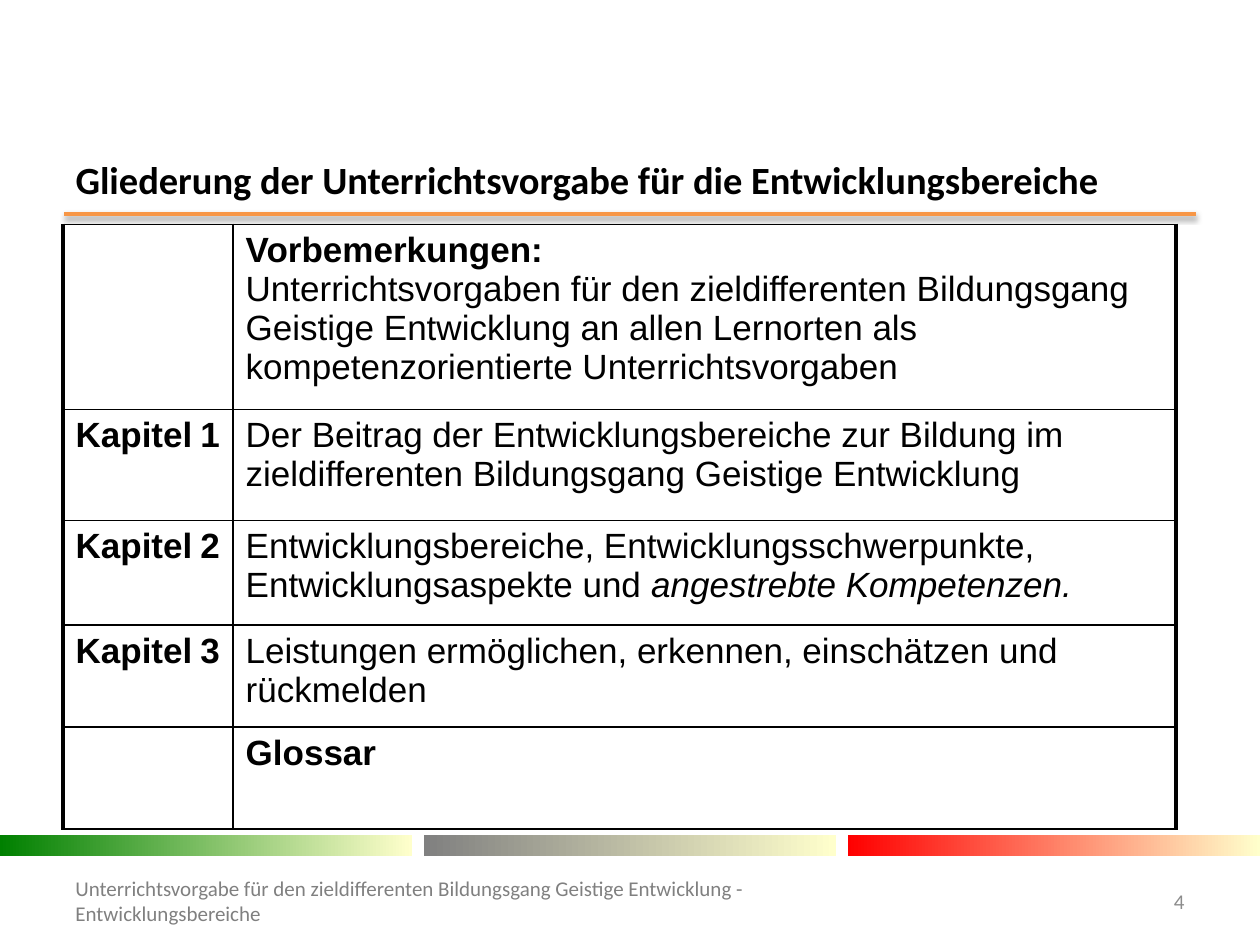
from lxml.etree import SubElement
from pptx import Presentation
from pptx.dml.color import RGBColor
from pptx.enum.shapes import MSO_CONNECTOR, MSO_SHAPE
from pptx.enum.text import MSO_ANCHOR, PP_ALIGN
from pptx.oxml.ns import qn
from pptx.util import Pt

COLORS = {
    "text": "000000", "footer": "808080", "number": "8C8C8C", "rule": "F79646",
    "green": "008000", "gray": "808080", "red": "FF0000", "cream": "FFFFCC",
}
TITLE = "Gliederung der Unterrichtsvorgabe für die Entwicklungsbereiche"
FOOTER = ("Unterrichtsvorgabe für den zieldifferenten Bildungsgang "
          "Geistige Entwicklung - Entwicklungsbereiche")
COLUMN_WIDTHS = (97.2, 538.8)
# Row height, chapter number, list of (text, style) spans; "\v" breaks the line
ROWS = [
    (105.8, None, [
        ("Vorbemerkungen: \v", "bold"),
        ("Unterrichtsvorgaben für den zieldifferenten Bildungsgang Geistige "
         "Entwicklung an allen Lernorten als kompetenzorientierte "
         "Unterrichtsvorgaben", "plain")]),
    (63.4, "1", [
        ("Der Beitrag der Entwicklungsbereiche zur Bildung im "
         "zieldifferenten Bildungsgang Geistige Entwicklung", "plain")]),
    (59.8, "2", [
        ("Entwicklungsbereiche, Entwicklungsschwerpunkte, "
         "Entwicklungsaspekte und ", "plain"),
        ("angestrebte Kompetenzen.", "italic")]),
    (58.3, "3", [
        ("Leistungen ermöglichen, erkennen, einschätzen und rückmelden",
         "plain")]),
    (58.3, None, [("Glossar", "bold")]),
]


def rgb(name):
    return RGBColor.from_string(COLORS[name])


def add_span(para, text, size, font, color="text", style="plain"):
    span = para.add_run()
    span.text = text.rstrip("\v")
    span.font.size = Pt(size)
    span.font.name = font
    span.font.bold = style == "bold"
    span.font.italic = style == "italic"
    span.font.color.rgb = rgb(color)
    if text.endswith("\v"):
        para.add_line_break()


def add_title(page):
    title = page.shapes.title
    title.left, title.top, title.width, title.height = Pt(36), Pt(88.6), Pt(648), Pt(28)
    title.text_frame.word_wrap = True
    title.text_frame.vertical_anchor = MSO_ANCHOR.MIDDLE
    para = title.text_frame.paragraphs[0]
    para.alignment = PP_ALIGN.LEFT
    add_span(para, TITLE, 22, "Calibri", style="bold")


def add_rule(page):
    """Draw the line under the title with its soft shadow."""
    rule = page.shapes.add_connector(
        MSO_CONNECTOR.STRAIGHT, Pt(36.7), Pt(122.4), Pt(683.3), Pt(122.4))
    rule.line.color.rgb = rgb("rule")
    rule.line.width = Pt(2)
    effects = SubElement(rule.line._get_or_add_ln().getparent(), qn("a:effectLst"))
    shadow = SubElement(effects, qn("a:outerShdw"), blurRad=str(Pt(3.1)),
                        dist=str(Pt(1.6)), dir="5400000", rotWithShape="0")
    color = SubElement(shadow, qn("a:srgbClr"), val=COLORS["text"])
    SubElement(color, qn("a:alpha"), val="38000")


def add_gradient_bar(page, left, color):
    bar = page.shapes.add_shape(
        MSO_SHAPE.RECTANGLE, Pt(left), Pt(477.4), Pt(235.4), Pt(11.5))
    bar.shadow.inherit = False
    bar.line.fill.background()
    bar.fill.gradient()
    bar.fill.gradient_angle = 0
    for stop, name in zip(bar.fill.gradient_stops, (color, "cream")):
        stop.color.rgb = rgb(name)


def add_footer_text(page, left, width, text, color, alignment):
    box = page.shapes.add_textbox(Pt(left), Pt(500.4), Pt(width), Pt(28.8))
    box.text_frame.word_wrap = True
    box.text_frame.vertical_anchor = MSO_ANCHOR.MIDDLE
    para = box.text_frame.paragraphs[0]
    para.alignment = alignment
    add_span(para, text, 12, "Calibri", color)


def set_borders(cell, left, right):
    properties = cell._tc.get_or_add_tcPr()
    for side, width in (("L", left), ("R", right), ("T", 1), ("B", 1)):
        line = SubElement(properties, qn(f"a:ln{side}"), w=str(Pt(width)))
        fill = SubElement(line, qn("a:solidFill"))
        SubElement(fill, qn("a:srgbClr"), val=COLORS["text"])


def add_outline_table(page):
    table = page.shapes.add_table(
        len(ROWS), len(COLUMN_WIDTHS), Pt(36), Pt(128.2),
        Pt(sum(COLUMN_WIDTHS)), Pt(sum(row[0] for row in ROWS))).table
    table.first_row = False
    table.horz_banding = False
    for column, width in zip(table.columns, COLUMN_WIDTHS):
        column.width = Pt(width)
    for row, (height, number, spans) in zip(table.rows, ROWS):
        row.height = Pt(height)
        chapter, content = row.cells
        set_borders(chapter, 2.25, 1)
        set_borders(content, 1, 2.25)
        for cell in (chapter, content):
            cell.fill.background()
        if number:
            para = chapter.text_frame.paragraphs[0]
            for text, size in (("Kapitel", 20), (" ", 16), (number, 20)):
                add_span(para, text, size, "Arial", style="bold")
        for text, style in spans:
            add_span(content.text_frame.paragraphs[0], text, 20, "Arial", style=style)


def main():
    deck = Presentation()
    deck.slide_width, deck.slide_height = Pt(720), Pt(540)
    page = deck.slides.add_slide(deck.slide_layouts[5])
    add_rule(page)
    for index, color in enumerate(("green", "gray", "red")):
        add_gradient_bar(page, index * 242.3, color)
    add_title(page)
    add_footer_text(page, 36, 409, FOOTER, "footer", PP_ALIGN.LEFT)
    add_footer_text(page, 638, 46, "4", "number", PP_ALIGN.RIGHT)
    add_outline_table(page)
    deck.save("out.pptx")


if __name__ == "__main__":
    main()
